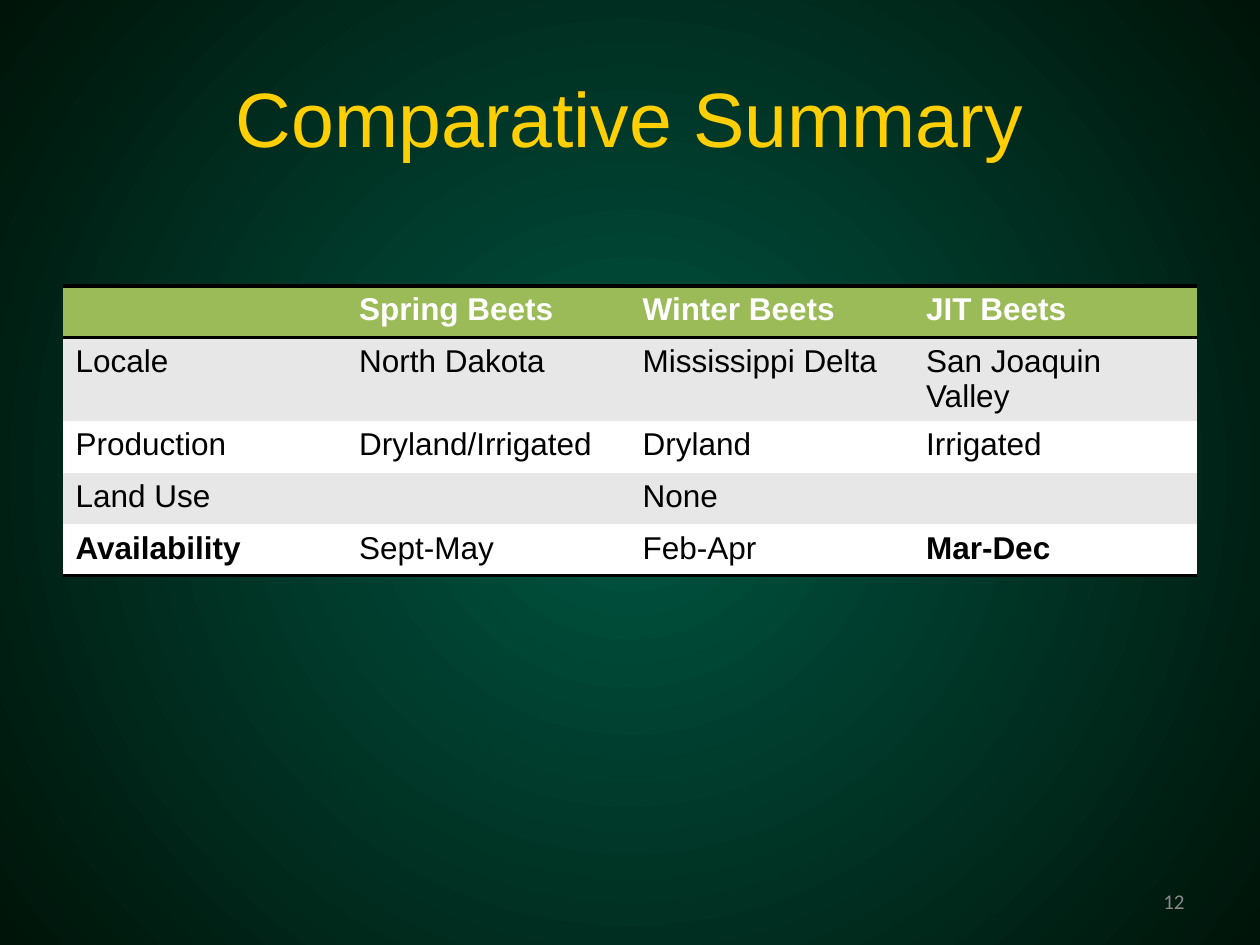
import pptx
import pptx.dml.color
import pptx.enum.text
import pptx.oxml
import pptx.oxml.ns
import pptx.util
from pptx.util import Inches

RGBColor = pptx.dml.color.RGBColor
CENTRE_GREEN = RGBColor(0x00, 0x56, 0x43)
EDGE_GREEN = RGBColor(0x00, 0x14, 0x09)
GOLD = RGBColor(0xFF, 0xCF, 0x01)
HEADER_GREEN = RGBColor(0x9B, 0xBB, 0x59)
BAND_GREY = RGBColor(0xE7, 0xE7, 0xE7)
NUMBER_GREY = RGBColor(0x89, 0x89, 0x89)
WHITE = RGBColor(0xFF, 0xFF, 0xFF)
BLACK = RGBColor(0x00, 0x00, 0x00)

NO_STYLE = "{2D5ABB26-0587-4C30-8999-92F81FD0307C}"
BEET_ROWS = [
    ["", "Spring Beets", "Winter Beets", "JIT Beets"],
    ["Locale", "North Dakota", "Mississippi Delta", "San Joaquin Valley"],
    ["Production", "Dryland/Irrigated", "Dryland", "Irrigated"],
    ["Land Use", "", "None", ""],
    ["Availability", "Sept-May", "Feb-Apr", "Mar-Dec"],
]
BOLD_ENTRIES = {"Availability", "Mar-Dec"}


def set_font(font, name, size, colour, bold=False):
    font.name = name
    font.size = pptx.util.Pt(size)
    font.color.rgb = colour
    font.bold = bold


def set_radial_background(slide):
    fill = slide.background.fill
    fill.gradient()
    for stop, colour, position in zip(fill.gradient_stops, (CENTRE_GREEN, EDGE_GREEN), (0, 1)):
        stop.color.rgb = colour
        stop.position = position
    linear = slide.background._cSld.find(".//" + pptx.oxml.ns.qn("a:lin"))
    radial = pptx.oxml.parse_xml(
        f'<a:path {pptx.oxml.ns.nsdecls("a")} path="circle">'
        '<a:fillToRect l="50000" t="50000" r="50000" b="50000"/></a:path>'
    )
    linear.getparent().replace(linear, radial)


def add_title(slide, text):
    title = slide.shapes.title
    title.left, title.top = Inches(0.5), Inches(0.3)
    title.width, title.height = Inches(9), Inches(1.25)
    frame = title.text_frame
    frame.text = text
    frame.vertical_anchor = pptx.enum.text.MSO_ANCHOR.MIDDLE
    para = frame.paragraphs[0]
    para.alignment = pptx.enum.text.PP_ALIGN.CENTER
    set_font(para.runs[0].font, "Arial", 44, GOLD)


def add_rules(cell, sides):
    """Draw 2 pt black borders on the given sides, listed top before bottom."""
    properties = cell._tc.get_or_add_tcPr()
    for index, side in enumerate(sides):
        properties.insert(index, pptx.oxml.parse_xml(
            f'<a:ln{side} {pptx.oxml.ns.nsdecls("a")} w="{pptx.util.Pt(2)}">'
            f'<a:solidFill><a:srgbClr val="{BLACK}"/></a:solidFill></a:ln{side}>'
        ))


def add_beet_table(slide):
    row_count, column_count = len(BEET_ROWS), len(BEET_ROWS[0])
    table = slide.shapes.add_table(
        row_count, column_count, Inches(0.5), Inches(2.27),
        Inches(9), Inches(0.41 * row_count),
    ).table
    table._tbl.tblPr.find(pptx.oxml.ns.qn("a:tableStyleId")).text = NO_STYLE
    rules = {0: "TB", row_count - 1: "B"}
    for row_index, entries in enumerate(BEET_ROWS):
        header = row_index == 0
        band = HEADER_GREEN if header else BAND_GREY if row_index % 2 else WHITE
        for column_index, entry in enumerate(entries):
            cell = table.cell(row_index, column_index)
            cell.text = entry
            cell.fill.solid()
            cell.fill.fore_color.rgb = band
            add_rules(cell, rules.get(row_index, ""))
            for run in cell.text_frame.paragraphs[0].runs:
                set_font(run.font, "Arial", 18, WHITE if header else BLACK,
                         header or entry in BOLD_ENTRIES)


def add_page_number(slide, number):
    box = slide.shapes.add_textbox(Inches(7.17), Inches(6.95), Inches(2.33), Inches(0.4))
    frame = box.text_frame
    frame.word_wrap = True
    frame.vertical_anchor = pptx.enum.text.MSO_ANCHOR.MIDDLE
    frame.text = number
    para = frame.paragraphs[0]
    para.alignment = pptx.enum.text.PP_ALIGN.RIGHT
    set_font(para.runs[0].font, "Calibri", 12, NUMBER_GREY)


def main():
    deck = pptx.Presentation()
    deck.slide_width, deck.slide_height = Inches(10), Inches(7.5)
    slide = deck.slides.add_slide(deck.slide_layouts.get_by_name("Title Only"))
    set_radial_background(slide)
    add_title(slide, "Comparative Summary")
    add_beet_table(slide)
    add_page_number(slide, "12")
    deck.save("out.pptx")


if __name__ == "__main__":
    main()
